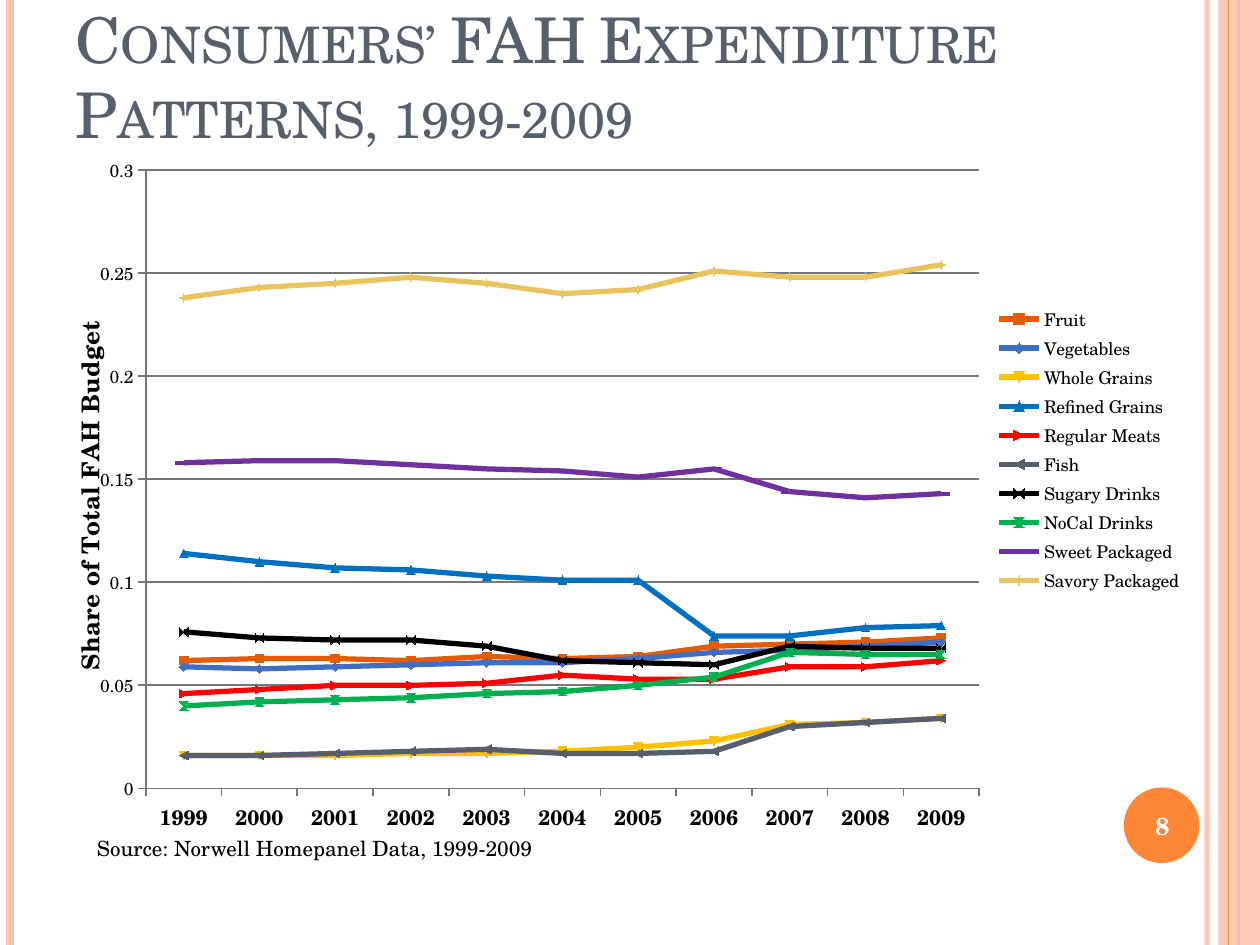
from dataclasses import dataclass

from lxml.etree import SubElement
from pptx import Presentation
from pptx.chart.data import CategoryChartData
from pptx.dml.color import RGBColor
from pptx.enum.chart import (XL_CHART_TYPE, XL_LEGEND_POSITION,
                             XL_MARKER_STYLE, XL_TICK_MARK)
from pptx.enum.shapes import MSO_CONNECTOR, MSO_SHAPE
from pptx.enum.text import MSO_ANCHOR, PP_ALIGN
from pptx.oxml.ns import qn
from pptx.util import Inches, Pt


@dataclass(frozen=True)
class Theme:
    font: str = "TeX Gyre Schola"
    ink: str = "000000"
    heading: str = "575F6D"
    accent: str = "FE8637"
    tint: str = "FEC3AE"
    white: str = "FFFFFF"
    grid: str = "777777"
    title_size: float = 36
    label_size: float = 14
    body_size: float = 12
    chart_size: float = 10
    series_width: float = 3
    grid_width: float = 1


def color(value):
    return RGBColor.from_string(value)


def format_font(font, *, name, size, ink, bold=False):
    font.name = name
    font.size = Pt(size)
    font.bold = bold
    font.color.rgb = color(ink)


def write_text(frame, text, *, name, size, ink, bold=False, small_caps=False,
               align=PP_ALIGN.LEFT, anchor=MSO_ANCHOR.TOP):
    frame.word_wrap = True
    frame.vertical_anchor = anchor
    para = frame.paragraphs[0]
    para.alignment = align
    span = para.add_run()
    span.text = text
    format_font(span.font, name=name, size=size, ink=ink, bold=bold)
    if small_caps:
        span.font._element.set("cap", "small")


def set_alpha(properties, percent):
    """Set the opacity of the first solid colour in the shape properties."""
    tint = properties.find(".//" + qn("a:srgbClr"))
    SubElement(tint, qn("a:alpha")).set("val", str(percent * 1000))


def place(part, index, bounds, inner=False):
    """Place a chart part by x, y, w, h as fractions of the chart."""
    for old in part.findall(qn("c:layout")):
        part.remove(old)
    layout = part.makeelement(qn("c:layout"), {})
    part.insert(index, layout)
    manual = SubElement(layout, qn("c:manualLayout"))
    settings = [("layoutTarget", "inner")] if inner else []
    settings += [("xMode", "edge"), ("yMode", "edge"), *zip("xywh", bounds)]
    for tag, value in settings:
        SubElement(manual, qn(f"c:{tag}")).set("val", str(value))


class SlideBuilder:
    def __init__(self, page, theme):
        self.page = page
        self.theme = theme

    def text(self, text, left, top, width, height, **style):
        box = self.page.shapes.add_textbox(
            Inches(left), Inches(top), Inches(width), Inches(height))
        write_text(box.text_frame, text, name=self.theme.font, **style)

    def shape(self, kind, left, top, width, height, fill, opacity=100):
        shape = self.page.shapes.add_shape(
            kind, Inches(left), Inches(top), Inches(width), Inches(height))
        shape.shadow.inherit = False
        shape.fill.solid()
        shape.fill.fore_color.rgb = color(fill)
        shape.line.fill.background()
        if opacity < 100:
            set_alpha(shape._element.spPr, opacity)

    def vertical_rule(self, x, ink, width, opacity=100):
        rule = self.page.shapes.add_connector(
            MSO_CONNECTOR.STRAIGHT, Inches(x), 0, Inches(x), Inches(7.5))
        rule.line.color.rgb = color(ink)
        rule.line.width = Pt(width)
        if opacity < 100:
            set_alpha(rule._element.spPr, opacity)
        SubElement(rule._element.spPr, qn("a:effectLst"))

    def line_chart(self, categories, rows, axis_title, left, top, width, height,
                   plot, legend):
        theme = self.theme
        data = CategoryChartData()
        data.categories = categories
        for name, _, _, values in rows:
            data.add_series(name, values)
        chart = self.page.shapes.add_chart(
            XL_CHART_TYPE.LINE_MARKERS, Inches(left), Inches(top),
            Inches(width), Inches(height), data).chart
        chart.has_title = False
        format_font(chart.font, name=theme.font, size=theme.chart_size, ink=theme.ink)
        chart.has_legend = True
        chart.legend.position = XL_LEGEND_POSITION.RIGHT
        chart.legend.include_in_layout = False

        # Axes
        years, shares = chart.category_axis, chart.value_axis
        shares.has_major_gridlines = True
        for axis in (years, shares):
            axis.major_tick_mark = XL_TICK_MARK.OUTSIDE
            axis.minor_tick_mark = XL_TICK_MARK.NONE
        for part in (years, shares, shares.major_gridlines):
            part.format.line.color.rgb = color(theme.grid)
            part.format.line.width = Pt(theme.grid_width)
        format_font(years.tick_labels.font, name=theme.font,
                    size=theme.body_size, ink=theme.ink, bold=True)
        shares.minimum_scale, shares.maximum_scale = 0, 0.3
        shares.major_unit = 0.05
        shares.tick_labels.number_format = "General"
        shares.tick_labels.number_format_is_linked = False
        write_text(shares.axis_title.text_frame, axis_title, name=theme.font,
                   size=theme.label_size, ink=theme.ink, bold=True,
                   align=PP_ALIGN.CENTER)

        # Series
        chart.plots[0].vary_by_categories = False
        for series, (_, ink, marker, _) in zip(chart.plots[0].series, rows):
            series.smooth = False
            series.format.line.color.rgb = color(ink)
            series.format.line.width = Pt(theme.series_width)
            series.marker.style = marker
            series.marker.size = 9 if marker == XL_MARKER_STYLE.DASH else 5
            series.marker.format.fill.solid()
            series.marker.format.fill.fore_color.rgb = color(ink)
            series.marker.format.line.color.rgb = color(ink)

        # Plot area and legend positions
        place(chart._chartSpace.chart.plotArea, 0, plot, inner=True)
        place(chart.legend._element, 1, legend)


AUTO = XL_MARKER_STYLE.AUTOMATIC
YEARS = [str(year) for year in range(1999, 2010)]
SHARES = [
    ("Fruit", "E65B00", AUTO,
     (0.062, 0.063, 0.063, 0.062, 0.064, 0.063, 0.064, 0.069, 0.07, 0.071, 0.073)),
    ("Vegetables", "3F6EC2", AUTO,
     (0.059, 0.058, 0.059, 0.06, 0.061, 0.061, 0.063, 0.066, 0.067, 0.069, 0.071)),
    ("Whole Grains", "FFC000", AUTO,
     (0.016, 0.016, 0.016, 0.017, 0.017, 0.018, 0.02, 0.023, 0.031, 0.032, 0.034)),
    ("Refined Grains", "0070C0", AUTO,
     (0.114, 0.11, 0.107, 0.106, 0.103, 0.101, 0.101, 0.074, 0.074, 0.078, 0.079)),
    ("Regular Meats", "FF0000", AUTO,
     (0.046, 0.048, 0.05, 0.05, 0.051, 0.055, 0.053, 0.053, 0.059, 0.059, 0.062)),
    ("Fish", "575F6D", AUTO,
     (0.016, 0.016, 0.017, 0.018, 0.019, 0.017, 0.017, 0.018, 0.03, 0.032, 0.034)),
    ("Sugary Drinks", "000000", AUTO,
     (0.076, 0.073, 0.072, 0.072, 0.069, 0.062, 0.061, 0.06, 0.069, 0.068, 0.068)),
    ("NoCal Drinks", "00B050", AUTO,
     (0.04, 0.042, 0.043, 0.044, 0.046, 0.047, 0.05, 0.054, 0.066, 0.065, 0.065)),
    ("Sweet Packaged", "7030A0", XL_MARKER_STYLE.DASH,
     (0.158, 0.159, 0.159, 0.157, 0.155, 0.154, 0.151, 0.155, 0.144, 0.141, 0.143)),
    ("Savory Packaged", "E9C45E", AUTO,
     (0.238, 0.243, 0.245, 0.248, 0.245, 0.24, 0.242, 0.251, 0.248, 0.248, 0.254)),
]


def main():
    theme = Theme()
    deck = Presentation()
    deck.slide_width, deck.slide_height = Inches(10), Inches(7.5)
    page = deck.slides.add_slide(deck.slide_layouts[6])
    builder = SlideBuilder(page, theme)

    # Side stripes
    builder.vertical_rule(9.58, theme.tint, 3, opacity=93)
    builder.vertical_rule(0.08, theme.tint, 4.5)
    builder.vertical_rule(9.83, theme.accent, 1.5)
    builder.shape(MSO_SHAPE.RECTANGLE, 9.67, 0, 0.33, 7.5, theme.tint, opacity=87)
    builder.vertical_rule(9.75, theme.accent, 0.75)

    # Title, chart and source
    builder.text("Consumers’ FAH Expenditure Patterns, 1999-2009", 0.5, 0.3, 9, 0.95,
                 size=theme.title_size, ink=theme.heading, small_caps=True,
                 anchor=MSO_ANCHOR.BOTTOM)
    builder.line_chart(YEARS, SHARES, "Share of Total FAH Budget",
                       0.5, 1.25, 9, 5.45, plot=(0.073, 0.017, 0.735, 0.902),
                       legend=(0.82, 0.21, 0.17, 0.43))
    builder.text("Source: Norwell Homepanel Data, 1999-2009", 0.67, 6.58, 6.25, 0.67,
                 size=theme.body_size, ink=theme.ink)

    # Page number
    builder.shape(MSO_SHAPE.OVAL, 8.92, 6.25, 0.6, 0.6, theme.accent)
    builder.text("8", 8.89, 6.27, 0.67, 0.57, size=theme.label_size, ink=theme.white,
                 bold=True, align=PP_ALIGN.CENTER, anchor=MSO_ANCHOR.MIDDLE)

    deck.save("out.pptx")


if __name__ == "__main__":
    main()
